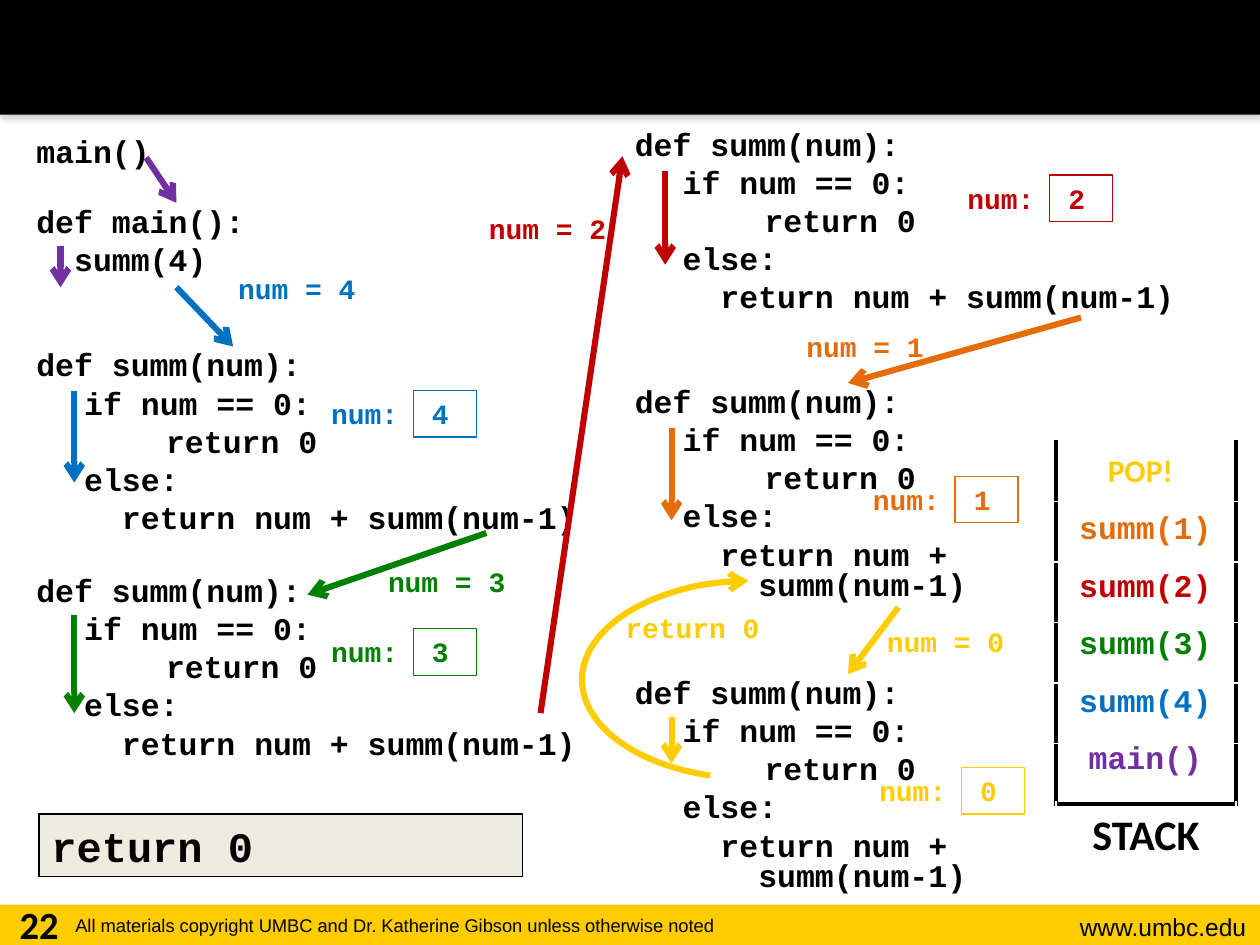
from dataclasses import dataclass

from lxml import etree
from pptx import Presentation, util as u
from pptx.dml.color import RGBColor
from pptx.enum import shapes, text
from pptx.oxml import ns

BLACK, WHITE, GOLD, PURPLE = "000000", "FFFFFF", "FFCC00", "7030A0"
BLUE, GREEN, RED, ORANGE = "0070C0", "008000", "C00000", "E46C0A"
CODE, SANS, PLAIN = "Courier New", "Calibri", "Arial"
LEFT, CENTER, RIGHT = text.PP_ALIGN.LEFT, text.PP_ALIGN.CENTER, text.PP_ALIGN.RIGHT
TOP, MIDDLE = text.MSO_ANCHOR.TOP, text.MSO_ANCHOR.MIDDLE

SUMM_LINES = ["def summ(num):", "\tif num == 0:", "\t\t return 0", "\telse:"]
LONG_RETURN = ["\t  return num + summ(num-1)"]
BROKEN_RETURN = ["\t  return num +\v    summ(num-1)"]


@dataclass
class Arrow:
    start: tuple[float, float]
    end: tuple[float, float]


@dataclass
class Call:
    """One recursive call: its code, its argument and its arrows."""
    value: int
    color: str
    code: tuple[float, float]
    size: tuple[float, float]
    last: list[str]
    variable: tuple[float, float]
    argument: tuple[float, float]
    call: Arrow
    steps: Arrow


WIDE, NARROW = (4.5, 1.64), (3.04, 1.84)
CALLS = [
    Call(4, BLUE, (0.19, 2.75), WIDE, LONG_RETURN, (2.53, 3.1), (1.76, 2.11),
         Arrow((1.4, 2.28), (1.85, 2.75)), Arrow((0.59, 3.1), (0.59, 3.83))),
    Call(3, GREEN, (0.19, 4.54), WIDE, LONG_RETURN, (2.53, 4.99), (2.95, 4.43),
         Arrow((3.86, 4.23), (2.44, 4.72)), Arrow((0.59, 4.88), (0.59, 5.66))),
    Call(2, RED, (4.94, 1), WIDE, LONG_RETURN, (7.58, 1.39), (3.75, 1.63),
         Arrow((4.29, 5.66), (4.94, 1.24)), Arrow((5.28, 1.36), (5.28, 2.1))),
    Call(1, ORANGE, (4.94, 3.04), NARROW, BROKEN_RETURN, (6.83, 3.78), (6.27, 2.57),
         Arrow((8.58, 2.52), (6.73, 3.04)), Arrow((5.33, 3.4), (5.33, 4.13))),
    Call(0, GOLD, (4.94, 5.35), NARROW, BROKEN_RETURN, (6.88, 6.09), (6.91, 4.91),
         Arrow((7.13, 4.82), (6.73, 5.35)), Arrow((5.33, 5.69), (5.33, 6.06))),
]


def rgb(color: str) -> RGBColor:
    return RGBColor.from_string(color)


def inches(*lengths: float) -> list[int]:
    return [u.Inches(length) for length in lengths]


def sub(parent, tag: str, **attributes):
    """Append a drawing element to an XML parent."""
    values = {name: str(value) for name, value in attributes.items()}
    return etree.SubElement(parent, ns.qn(tag), values)


def write(frame, lines: list[str], *, size=18, font=CODE, color=BLACK, bold=True,
          align=LEFT, anchor=TOP, code=False, tab=None) -> None:
    frame.word_wrap = True
    frame.vertical_anchor = anchor
    for index, line in enumerate(lines):
        para = frame.add_paragraph() if index else frame.paragraphs[0]
        para.text = line
        para.alignment = align
        if code:
            para.line_spacing = 0.8
            para.space_before = u.Pt(4.5 if index else 0)
            properties = para._p.get_or_add_pPr()
            properties.set("marL", str(u.Inches(0.38)))
            properties.set("indent", str(u.Inches(-0.38)))
        if tab:
            stops = sub(para._p.get_or_add_pPr(), "a:tabLst")
            sub(stops, "a:tab", pos=u.Inches(tab), algn="l")
        for span in para.runs:
            span.font.size = u.Pt(size)
            span.font.name = font
            span.font.bold = bold
            span.font.color.rgb = rgb(color)


def add_text(parent, lines: list[str], at: tuple, **style) -> None:
    box = parent.shapes.add_textbox(*inches(*at))
    write(box.text_frame, lines, **style)


def add_box(parent, at: tuple, *, fill=None, line=None, width=0.75,
            kind=shapes.MSO_SHAPE.RECTANGLE):
    box = parent.shapes.add_shape(kind, *inches(*at))
    box.shadow.inherit = False
    if fill:
        box.fill.solid()
        box.fill.fore_color.rgb = rgb(fill)
    else:
        box.fill.background()
    if line:
        box.line.color.rgb = rgb(line)
        box.line.width = u.Pt(width)
    else:
        box.line.fill.background()
    return box


def add_head(shape) -> None:
    sub(shape.line._get_or_add_ln(), "a:tailEnd", type="arrow")


def add_arrow(page, arrow: Arrow, color: str) -> None:
    line = page.shapes.add_connector(shapes.MSO_CONNECTOR.STRAIGHT,
                                     *inches(*arrow.start, *arrow.end))
    line.line.color.rgb = rgb(color)
    line.line.width = u.Pt(3.5)
    add_head(line)
    sub(line._element.spPr, "a:effectLst")


def add_call(page, call: Call) -> None:
    add_text(page, SUMM_LINES + call.last, (*call.code, *call.size), code=True)
    left, top = call.variable
    group = page.shapes.add_group_shape()
    add_text(group, [f"num:\t{call.value}"], (left, top, 1.25, 0.37),
             size=16, color=call.color, tab=0.8)
    add_box(group, (left + 0.75, top, 0.5, 0.37), line=call.color)
    add_text(page, [f"num = {call.value}"], (*call.argument, 1.19, 0.37),
             size=16, color=call.color, align=CENTER)
    add_arrow(page, call.call, call.color)
    add_arrow(page, call.steps, call.color)


def add_frame(page) -> None:
    """Header band, footer band and footer texts."""
    add_box(page, (0, 7.18, 10, 0.32), fill=GOLD)
    header = add_box(page, (0, 0, 10, 0.91), fill=BLACK)
    effects = header._element.spPr.find(ns.qn("a:effectLst"))
    shadow = sub(effects, "a:outerShdw", blurRad=u.Pt(3.1), dist=u.Pt(1.8),
                 dir=90 * 60000, algn="t", rotWithShape=0)
    sub(sub(shadow, "a:srgbClr", val="808080"), "a:alpha", val=35000)
    add_text(page, ["www.umbc.edu"], (8, 7.19, 1.99, 0.34),
             size=14, font=PLAIN, bold=False, align=RIGHT)
    add_text(page, ["All materials copyright UMBC and Dr. Katherine Gibson "
                    "unless otherwise noted"], (0.5, 7.21, 6.56, 0.29),
             size=10.5, font=PLAIN, bold=False)
    add_text(page, ["22"], (0, 7.1, 0.62, 0.4), size=22, font=SANS, align=CENTER)


def add_stack(page) -> None:
    """Open-topped table with one label for each call."""
    rows = 7
    table = page.shapes.add_table(rows, 1, *inches(8.38, 3.5, 1.43, 3.36)).table
    table.first_row = table.horz_banding = False
    for index in range(rows):
        cell = table.cell(index, 0)
        sides = ["lnL", "lnR"] if index < rows - 1 else ["lnT"]
        if index == rows - 2:
            sides.append("lnB")
        for side in sides:
            border = sub(cell._tc.get_or_add_tcPr(), f"a:{side}", w=u.Pt(3))
            sub(sub(border, "a:solidFill"), "a:srgbClr", val=BLACK)
        cell.fill.background()
    write(table.cell(rows - 1, 0).text_frame, ["STACK"],
          size=24, font=SANS, align=CENTER)

    labels = [("main()", PURPLE)]
    labels += [(f"summ({call.value})", call.color) for call in CALLS if call.value]
    for index, (label, color) in enumerate(reversed(labels), start=1):
        box = add_box(page, (8.44, 3.5 + index * 0.456, 1.3, 0.46), fill=WHITE)
        write(box.text_frame, [label], color=color, align=CENTER, anchor=MIDDLE)
    popped = add_box(page, (8.51, 3.5, 1.08, 0.46), fill=WHITE)
    write(popped.text_frame, ["POP!"], font=SANS, color=GOLD,
          align=CENTER, anchor=MIDDLE)


def main() -> None:
    deck = Presentation()
    deck.slide_width, deck.slide_height = inches(10, 7.5)
    page = deck.slides.add_slide(deck.slide_layouts[6])
    add_frame(page)

    # Start of the program
    add_text(page, ["main()"], (0.19, 1.06, 1.21, 0.39), code=True)
    add_text(page, ["def main():", "  summ(4)"], (0.19, 1.61, 1.9, 0.66), code=True)
    add_arrow(page, Arrow((1.16, 1.25), (1.4, 1.61)), PURPLE)
    add_arrow(page, Arrow((0.48, 1.95), (0.48, 2.28)), PURPLE)

    for call in CALLS:
        add_call(page, call)

    # Value going back from the last call
    result = add_box(page, (0.31, 6.46, 3.84, 0.5), fill="EEECE1", line=BLACK)
    write(result.text_frame, ["return 0"], size=24)
    arc = add_box(page, (4.62, 4.61, 2.7, 1.57), line=GOLD, width=3.5,
                  kind=shapes.MSO_SHAPE.ARC)
    arc.adjustments[0], arc.adjustments[1] = 68.19, 160.74
    add_head(arc)
    add_text(page, ["return 0"], (4.82, 4.8, 1.35, 0.37),
             size=16, color=GOLD, align=CENTER)

    add_stack(page)
    deck.save("out.pptx")


if __name__ == "__main__":
    main()
